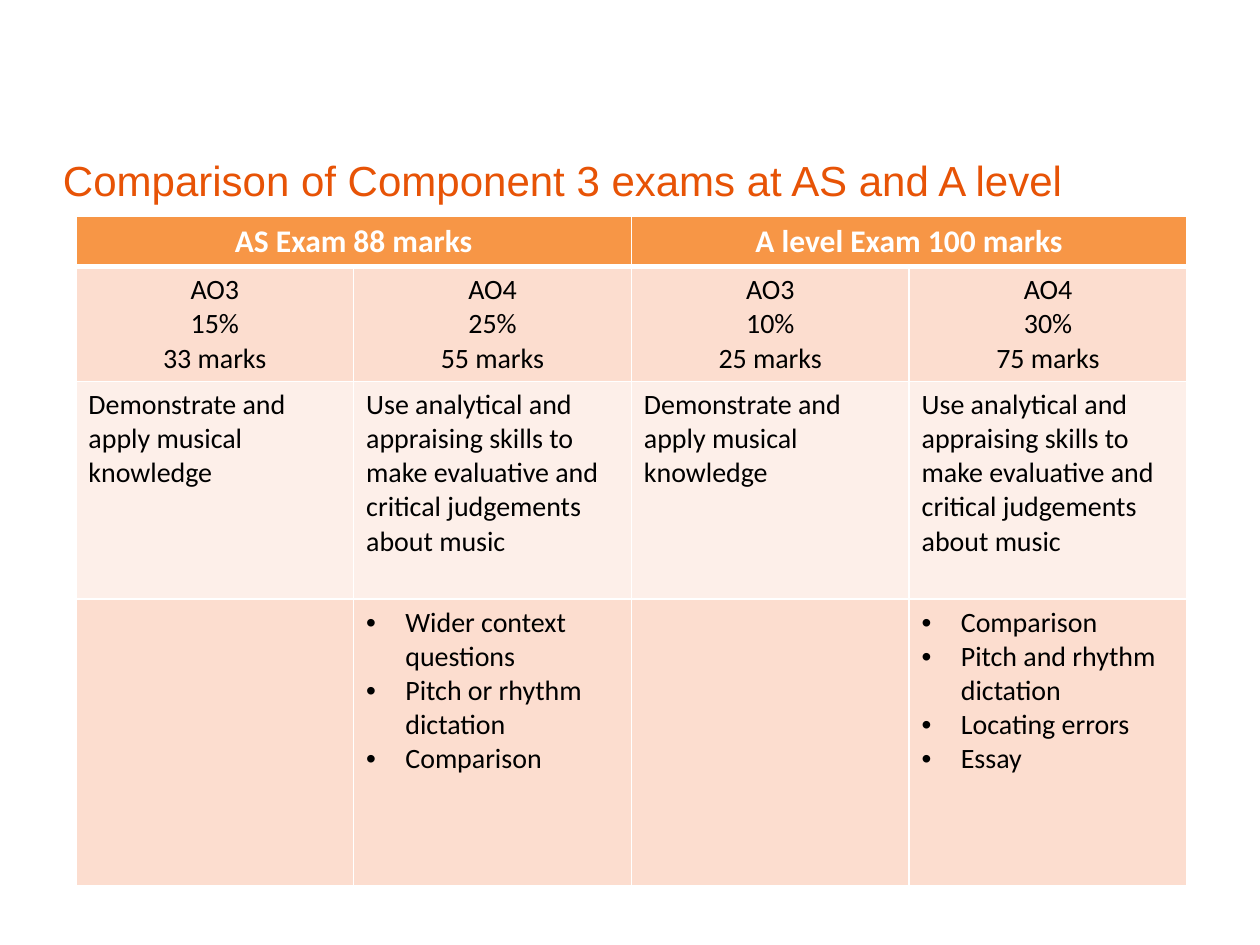
from lxml.etree import SubElement
from pptx import Presentation
from pptx.dml.color import RGBColor
from pptx.enum.text import MSO_ANCHOR, PP_ALIGN
from pptx.oxml.ns import qn
from pptx.util import Cm, Pt

COLORS = {
    "title": "E75306",
    "header": "F79646",
    "band": "FCDDCF",
    "light": "FDEFE9",
    "white": "FFFFFF",
    "black": "000000",
}


def write_text(frame, lines, size=16, font="Calibri", color="black",
               bold=False, align=PP_ALIGN.LEFT, bullet=False):
    for index, line in enumerate(lines):
        para = frame.paragraphs[0] if index == 0 else frame.add_paragraph()
        para.alignment = align
        if bullet:
            properties = para._p.get_or_add_pPr()
            properties.set("marL", str(Cm(0.79)))
            properties.set("indent", str(-Cm(0.79)))
            SubElement(properties, qn("a:buFont"), typeface="Arial")
            SubElement(properties, qn("a:buChar"), char="•")
        span = para.add_run()
        span.text = line
        span.font.size = Pt(size)
        span.font.name = font
        span.font.bold = bold
        span.font.color.rgb = RGBColor.from_string(COLORS[color])


def style_cell(cell, fill, top=1, bottom=1):
    properties = cell._tc.get_or_add_tcPr()
    for side, width in {"L": 1, "R": 1, "T": top, "B": bottom}.items():
        line = SubElement(properties, qn(f"a:ln{side}"), w=str(Pt(width)))
        solid = SubElement(line, qn("a:solidFill"))
        SubElement(solid, qn("a:srgbClr"), val=COLORS["white"])
    cell.fill.solid()
    cell.fill.fore_color.rgb = RGBColor.from_string(COLORS[fill])


deck = Presentation()
deck.slide_width, deck.slide_height = Cm(25.4), Cm(19.05)
page = deck.slides.add_slide(deck.slide_layouts[6])

title_box = page.shapes.add_textbox(Cm(1.02), Cm(2.9), Cm(23.39), Cm(1.45))
title_box.text_frame.word_wrap = True
title_box.text_frame.vertical_anchor = MSO_ANCHOR.MIDDLE
write_text(title_box.text_frame, ["Comparison of Component 3 exams at AS and A level"],
           size=24, font="Arial", color="title")

row_heights = [1, 2.31, 4.39, 5.77]
row_fills = ["header", "band", "light", "band"]
table = page.shapes.add_table(4, 4, Cm(1.53), Cm(4.36), Cm(22.4), Cm(sum(row_heights))).table
for column in table.columns:
    column.width = Cm(5.6)
for index, (height, fill) in enumerate(zip(row_heights, row_fills)):
    table.rows[index].height = Cm(height)
    for cell in table.rows[index].cells:
        style_cell(cell, fill, top=3 if index == 1 else 1, bottom=3 if index == 0 else 1)

for column, heading in [(0, "AS Exam 88 marks"), (2, "A level Exam 100 marks")]:
    cell = table.cell(0, column)
    cell.merge(table.cell(0, column + 1))
    write_text(cell.text_frame, [heading], size=18, color="white", bold=True,
               align=PP_ALIGN.CENTER)

knowledge = "Demonstrate and apply musical knowledge"
appraisal = ("Use analytical and appraising skills to make evaluative "
             "and critical judgements about music")
objectives = [
    (["AO3", "15%", "33 marks"], knowledge, []),
    (["AO4", "25%", "55 marks"], appraisal,
     ["Wider context questions", "Pitch or rhythm dictation", "Comparison"]),
    (["AO3", "10%", "25 marks"], knowledge, []),
    (["AO4", "30%", "75 marks"], appraisal,
     ["Comparison", "Pitch and rhythm dictation", "Locating errors", "Essay"]),
]
for column, (weighting, skill, questions) in enumerate(objectives):
    write_text(table.cell(1, column).text_frame, weighting, align=PP_ALIGN.CENTER)
    write_text(table.cell(2, column).text_frame, [skill])
    write_text(table.cell(3, column).text_frame, questions, bullet=True)

deck.save("out.pptx")
